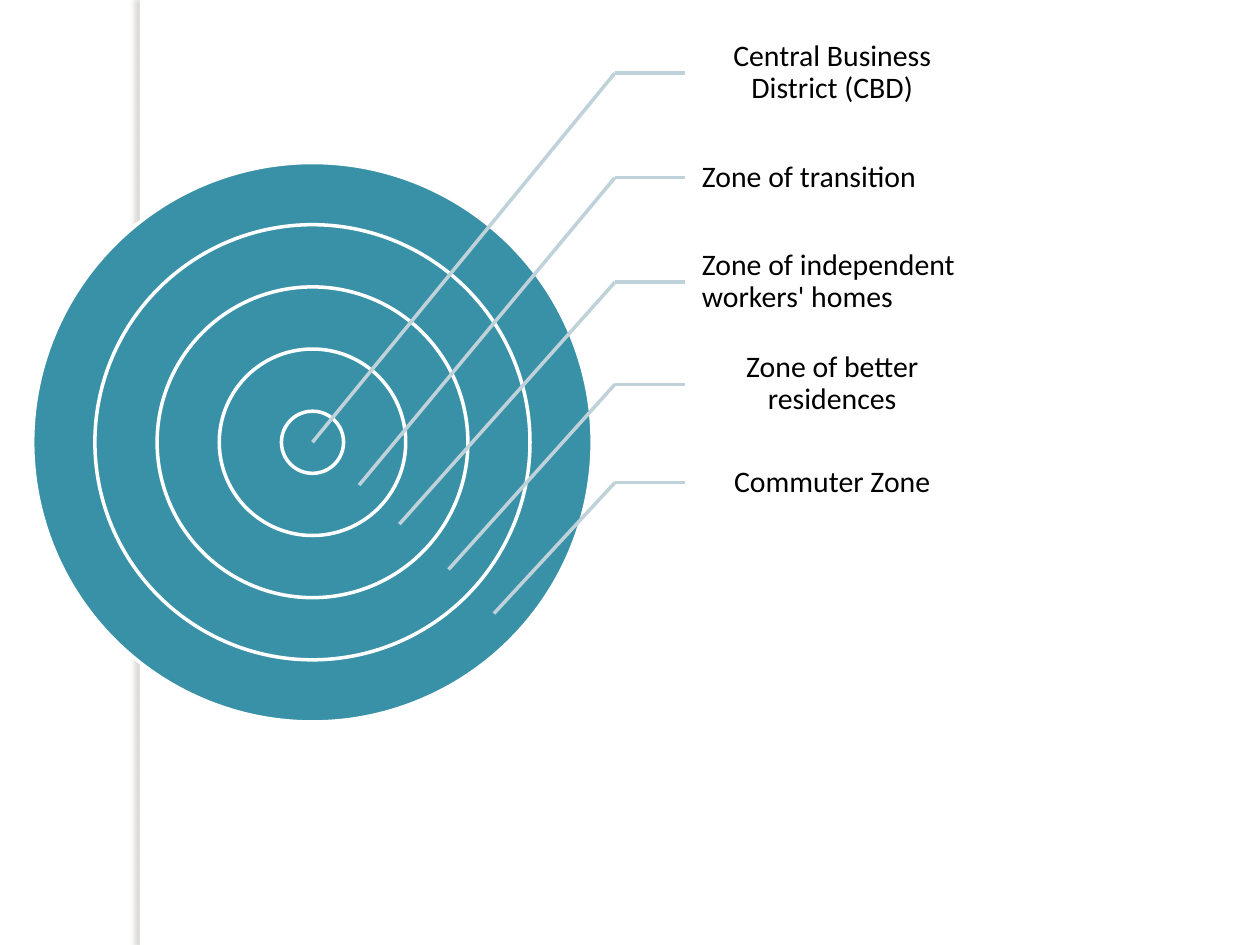
from dataclasses import dataclass
from typing import Any

import pptx
import pptx.dml.color
import pptx.enum.shapes
import pptx.enum.text
import pptx.oxml
import pptx.oxml.ns
import pptx.util

COLORS = {
    "paper": "FFFFFF",
    "ring": "3891A7",
    "leader": "BFD2D9",
    "text": "000000",
    "shade": "736F63",
}
CELL = 0.1
COLUMNS, ROWS = 100, 75
CENTER_COLUMN, CENTER_ROW = 24.8, 35.1
OUTER_DIAMETER = 44.4
ELBOW_COLUMN, LABEL_COLUMN = 48.8, 54.4
LABEL_WIDTH, LABEL_HEIGHT = 22.2, 7.8
LEFT = pptx.enum.text.PP_ALIGN.LEFT
CENTER = pptx.enum.text.PP_ALIGN.CENTER


@dataclass(frozen=True)
class Zone:
    name: str
    label_row: float
    target_column: float
    target_row: float
    alignment: Any = CENTER


ZONES = [
    Zone("Central Business District (CBD)", 5.8, CENTER_COLUMN, CENTER_ROW),
    Zone("Zone of transition", 14.1, 28.5, 38.5, LEFT),
    Zone("Zone of independent workers' homes", 22.4, 31.7, 41.6, LEFT),
    Zone("Zone of better residences", 30.5, 35.6, 45.2),
    Zone("Commuter Zone", 38.3, 39.2, 48.7),
]


def cells(count: float) -> int:
    return pptx.util.Inches(count * CELL)


def color(name: str) -> pptx.dml.color.RGBColor:
    return pptx.dml.color.RGBColor.from_string(COLORS[name])


def apply(target: Any, formats: dict[str, Any]) -> None:
    for name, value in formats.items():
        setattr(target, name, value)


def draw_shape(page: Any, kind: Any, left: float, top: float,
               width: float, height: float, fill: str) -> Any:
    shape = page.shapes.add_shape(
        kind, cells(left), cells(top), cells(width), cells(height))
    shape.shadow.inherit = False
    shape.fill.solid()
    shape.fill.fore_color.rgb = color(fill)
    return shape


def draw_side_bar(page: Any) -> None:
    bar = draw_shape(page, pptx.enum.shapes.MSO_SHAPE.RECTANGLE,
                     11.1, 0, 0.8, ROWS, "paper")
    bar.line.fill.background()
    effects = bar._element.spPr.find(pptx.oxml.ns.qn("a:effectLst"))
    effects.append(pptx.oxml.parse_xml(
        f'<a:outerShdw {pptx.oxml.ns.nsdecls("a")} blurRad="{pptx.util.Pt(3)}" '
        f'dist="{pptx.util.Pt(3)}" dir="10800000" algn="tl" rotWithShape="0">'
        f'<a:srgbClr val="{COLORS["shade"]}"><a:alpha val="25000"/></a:srgbClr>'
        '</a:outerShdw>'))


def draw_ring(page: Any, diameter: float) -> None:
    ring = draw_shape(page, pptx.enum.shapes.MSO_SHAPE.OVAL,
                      CENTER_COLUMN - diameter / 2, CENTER_ROW - diameter / 2,
                      diameter, diameter, "ring")
    ring.line.color.rgb = color("paper")
    ring.line.width = pptx.util.Pt(2)


def draw_leader(page: Any, zone: Zone, column: float, row: float) -> None:
    leader = page.shapes.add_connector(
        pptx.enum.shapes.MSO_CONNECTOR.STRAIGHT,
        cells(ELBOW_COLUMN), cells(zone.label_row), cells(column), cells(row))
    leader.line.color.rgb = color("leader")
    leader.line.width = pptx.util.Pt(2)
    properties = leader._element.spPr
    properties.append(properties.makeelement(pptx.oxml.ns.qn("a:effectLst"), {}))


def draw_label(page: Any, zone: Zone) -> None:
    box = page.shapes.add_textbox(
        cells(LABEL_COLUMN), cells(zone.label_row - LABEL_HEIGHT / 2),
        cells(LABEL_WIDTH), cells(LABEL_HEIGHT))
    apply(box.text_frame, {
        "word_wrap": True,
        "vertical_anchor": pptx.enum.text.MSO_ANCHOR.MIDDLE,
        "margin_left": cells(1.3),
        "margin_top": cells(0.2),
        "margin_right": cells(0.2),
        "margin_bottom": cells(0.2),
    })
    para = box.text_frame.paragraphs[0]
    apply(para, {"alignment": zone.alignment, "line_spacing": 0.9})
    span = para.add_run()
    span.text = zone.name
    apply(span.font, {"name": "Calibri", "size": pptx.util.Pt(17)})
    span.font.color.rgb = color("text")


def main() -> None:
    deck = pptx.Presentation()
    apply(deck, {"slide_width": cells(COLUMNS), "slide_height": cells(ROWS)})
    page = deck.slides.add_slide(deck.slide_layouts[6])
    page.background.fill.solid()
    page.background.fill.fore_color.rgb = color("paper")
    draw_side_bar(page)
    for share in range(9, 0, -2):
        draw_ring(page, OUTER_DIAMETER * share / 9)
    for zone in ZONES:
        draw_label(page, zone)
        draw_leader(page, zone, LABEL_COLUMN, zone.label_row)
        draw_leader(page, zone, zone.target_column, zone.target_row)
    deck.save("out.pptx")


if __name__ == "__main__":
    main()
